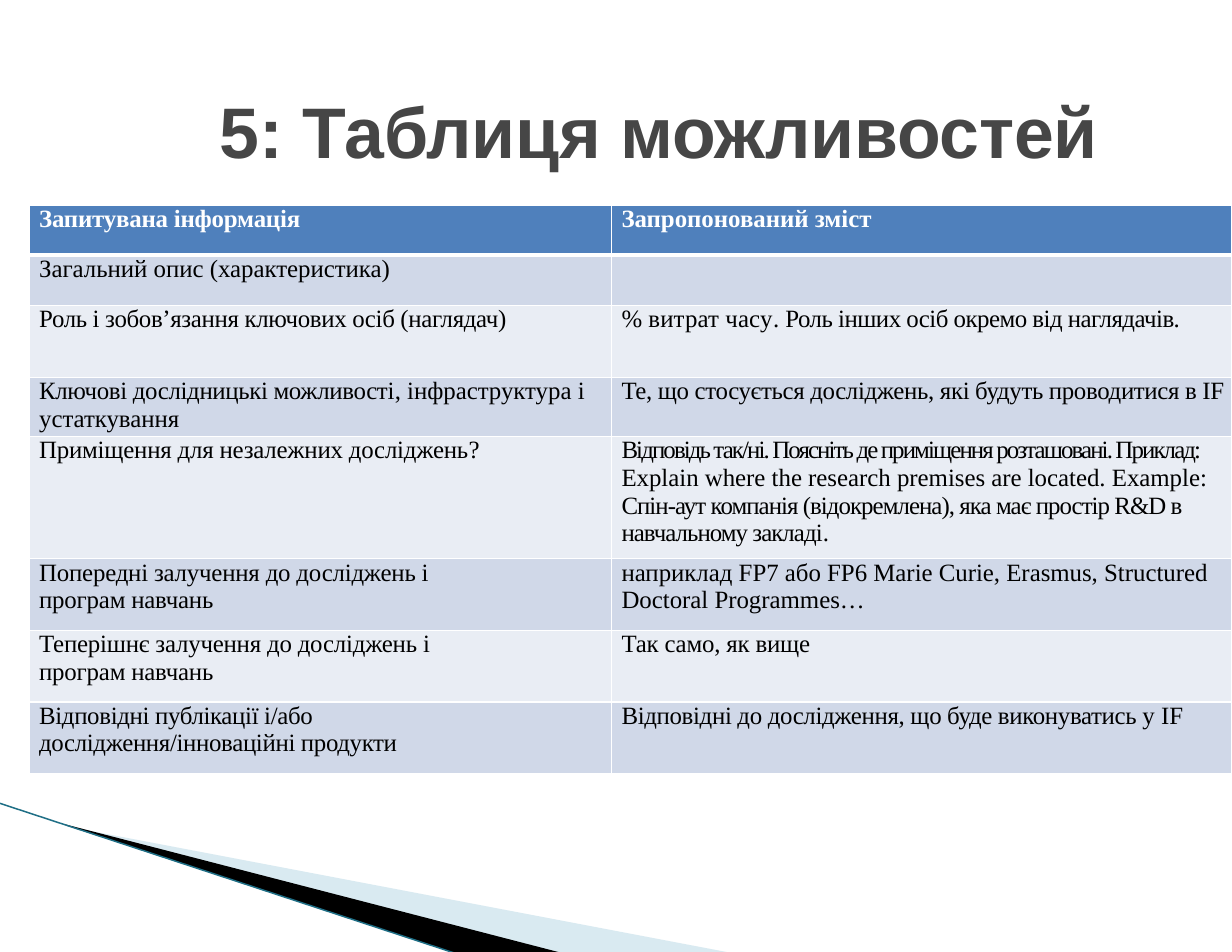
from lxml.etree import SubElement
from pptx import Presentation
from pptx.dml.color import RGBColor
from pptx.enum.shapes import MSO_CONNECTOR
from pptx.enum.text import MSO_ANCHOR, MSO_AUTO_SIZE, PP_ALIGN
from pptx.oxml.ns import qn
from pptx.util import Inches, Pt

WHITE = RGBColor(0xFF, 0xFF, 0xFF)
BLACK = RGBColor(0, 0, 0)
TITLE_GREY = RGBColor(0x46, 0x46, 0x46)
HEADER_BLUE = RGBColor(0x4F, 0x80, 0xBC)
BAND_DARK = RGBColor(0xD0, 0xD8, 0xE8)
BAND_LIGHT = RGBColor(0xE9, 0xED, 0xF4)
PALE_TEAL = RGBColor(0xA0, 0xCB, 0xDC)
LINE_TEAL = RGBColor(0x1F, 0x6F, 0x86)

COLUMN_WIDTHS = (5.2, 5.54)
ROW_HEIGHTS = (0.45, 0.45, 0.64, 0.53, 1.09, 0.64, 0.64, 0.64)
NARROW_ROWS = (5, 6, 7)  # first column wraps early here

# Each cell is a list of (text, letter spacing in points)
ROWS = [
    ([("Запитувана інформація", -0.1)],
     [("Запропонований зміст", 0)]),
    ([("Загальний опис (характеристика)", 0)],
     []),
    ([("Роль і зобов’язання ключових осіб (наглядач)", -0.2)],
     [("% ", 0), ("витрат часу", 0.1), (". ", 0),
      ("Роль інших осіб окремо від наглядачів.", -0.3)]),
    ([("Ключові дослідницькі можливості", -0.2),
      (", інфраструктура і устаткування", 0)],
     [("Те, що стосується досліджень, які будуть проводитися в IF", -0.2)]),
    ([("Приміщення для незалежних досліджень", -0.1), ("?", 0)],
     [("Відповідь так/ні. Поясніть де приміщення розташовані. Приклад: ", -1.2),
      ("Explain where the research premises are located. Example: ", 0),
      ("Спін-аут компанія (відокремлена), яка має простір R&D в "
       "навчальному закладі", -0.6), (".", 0)]),
    ([("Попередні залучення до досліджень і програм навчань", -0.1)],
     [("наприклад FP7 або FP6 Marie Curie, Erasmus, "
       "Structured Doctoral Programmes…", 0)]),
    ([("Теперішнє залучення до досліджень і програм навчань", -0.1)],
     [("Так само, як вище", -0.1)]),
    ([("Відповідні публікації і/або дослідження/інноваційні продукти", -0.2)],
     [("Відповідні до дослідження, що буде виконуватись у ", -0.2), ("IF", 0)]),
]


def add_runs(paragraph, runs, font_name, size, color, bold):
    for text, spacing in runs:
        run = paragraph.add_run()
        run.text = text
        font = run.font
        font.name, font.size, font.bold = font_name, Pt(size), bold
        font.color.rgb = color
        if spacing:
            run._r.get_or_add_rPr().set("spc", str(round(spacing * 100)))


def add_wedge(slide, corners, color, alpha=None):
    points = [(Inches(x), Inches(y)) for x, y in corners]
    builder = slide.shapes.build_freeform(*points[0])
    builder.add_line_segments(points[1:], close=True)
    wedge = builder.convert_to_shape()
    wedge.shadow.inherit = False
    wedge.fill.solid()
    wedge.fill.fore_color.rgb = color
    wedge.line.fill.background()
    if alpha:
        rgb = wedge._element.spPr.find(qn("a:solidFill"))[0]
        SubElement(rgb, qn("a:alpha")).set("val", str(alpha * 1000))


def add_corner_decoration(slide, left, top):
    """Two wedges and an edge line sweeping down from the left."""
    def place(*offsets):
        return [(left + x, top + y) for x, y in offsets]

    add_wedge(slide, place((0.6, 0.21), (6.54, 1.34), (5.01, 1.34), (0.6, 0.2)),
              PALE_TEAL, alpha=40)
    add_wedge(slide, place((0.58, 0.19), (5.02, 1.34), (4.09, 1.35), (0.59, 0.2)),
              BLACK)
    (x1, y1), (x2, y2) = place((-0.01, 0), (4.09, 1.35))
    edge = slide.shapes.add_connector(MSO_CONNECTOR.STRAIGHT, Inches(x1),
                                      Inches(y1), Inches(x2), Inches(y2))
    edge.line.color.rgb = LINE_TEAL
    edge.line.width = Pt(0.95)
    SubElement(edge._element.spPr, qn("a:effectLst"))


def fill_title(slide, left, top, width, height):
    title = slide.shapes.title
    title.left, title.top = Inches(left), Inches(top)
    title.width, title.height = Inches(width), Inches(height)
    frame = title.text_frame
    frame.margin_left = frame.margin_right = frame.margin_bottom = 0
    frame.margin_top = Inches(0.35)
    frame.vertical_anchor = MSO_ANCHOR.MIDDLE
    frame.auto_size = MSO_AUTO_SIZE.NONE
    heading = frame.paragraphs[0]
    heading.alignment = PP_ALIGN.CENTER
    add_runs(heading, [("5", -0.1), (": ", 0), ("Таблиця можливостей", -0.1)],
             "Arial", 46, TITLE_GREY, True)


def set_borders(cell, widths):
    """White borders, widths in points for left, right, top, bottom."""
    properties = cell._tc.get_or_add_tcPr()
    for index, (side, width) in enumerate(zip("LRTB", widths)):
        border = SubElement(properties, qn(f"a:ln{side}"), w=str(Pt(width)))
        fill = SubElement(border, qn("a:solidFill"))
        SubElement(fill, qn("a:srgbClr"), val=str(WHITE))
        properties.insert(index, border)


def fill_cell(cell, runs, row, column):
    is_header = row == 0
    cell.margin_left = Inches(0.09)
    cell.margin_top = cell.margin_bottom = 0
    cell.margin_right = Inches(1.1 if column == 0 and row in NARROW_ROWS else 0)
    cell.vertical_anchor = MSO_ANCHOR.TOP
    cell.fill.solid()
    band = BAND_DARK if row % 2 else BAND_LIGHT
    cell.fill.fore_color.rgb = HEADER_BLUE if is_header else band
    set_borders(cell, (1, 1, 3 if row == 1 else 1, 3 if is_header else 1))
    add_runs(cell.text_frame.paragraphs[0], runs, "Times New Roman", 16,
             WHITE if is_header else BLACK, is_header)


def add_capacity_table(slide, left, top):
    frame = slide.shapes.add_table(
        len(ROWS), len(COLUMN_WIDTHS), Inches(left), Inches(top),
        Inches(sum(COLUMN_WIDTHS)), Inches(sum(ROW_HEIGHTS)))
    table = frame.table
    for column, width in zip(table.columns, COLUMN_WIDTHS):
        column.width = Inches(width)
    for row, height in zip(table.rows, ROW_HEIGHTS):
        row.height = Inches(height)
    for row, cells in enumerate(ROWS):
        for column, runs in enumerate(cells):
            fill_cell(table.cell(row, column), runs, row, column)


def main():
    presentation = Presentation()
    presentation.slide_width = Inches(11)
    presentation.slide_height = Inches(8.5)
    slide = presentation.slides.add_slide(presentation.slide_layouts[5])
    add_corner_decoration(slide, 0, 7.17)
    fill_title(slide, 1.67, 0.42, 8.42, 1.13)
    add_capacity_table(slide, 0.26, 1.83)
    presentation.save("out.pptx")


if __name__ == "__main__":
    main()
